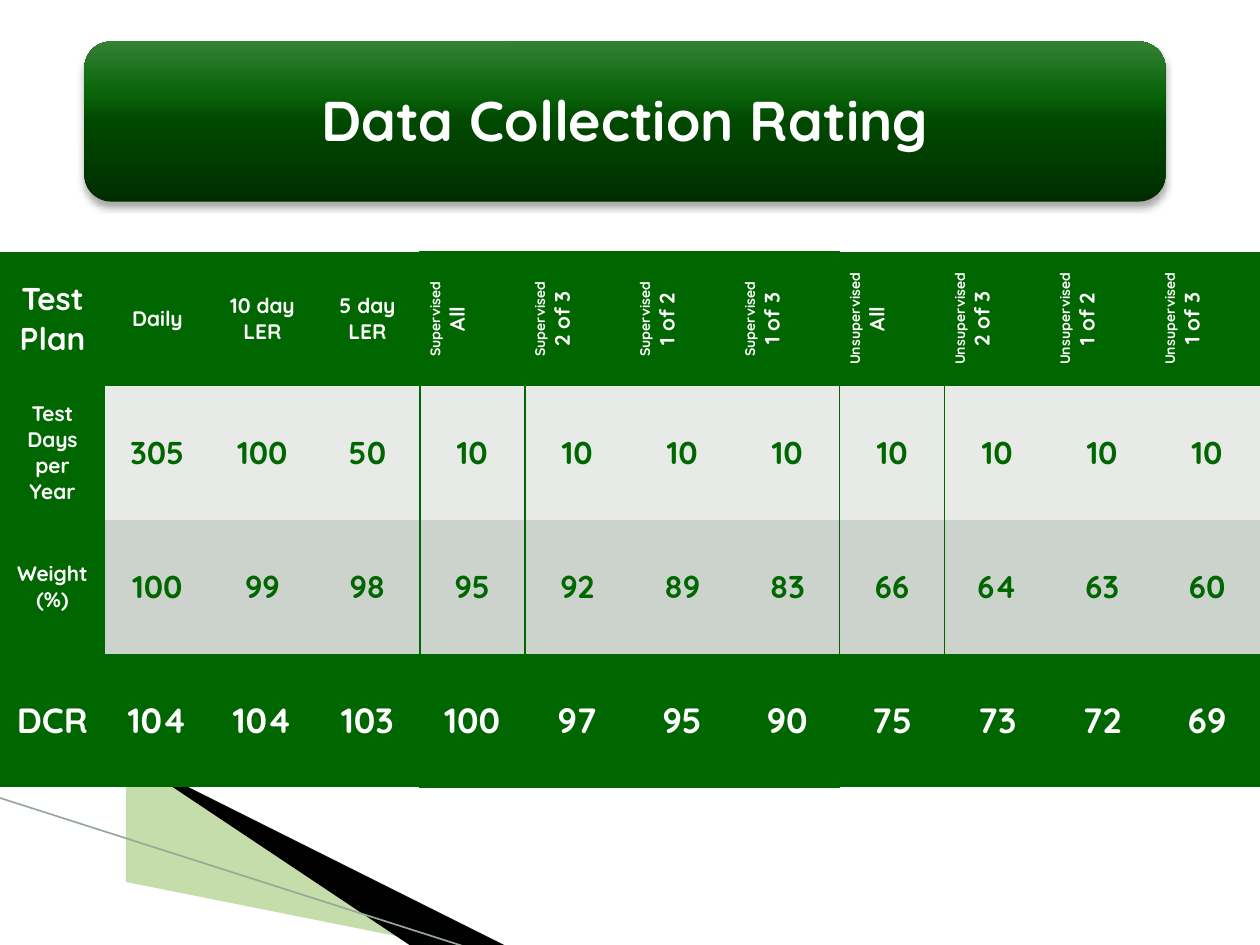
from lxml import etree
from pptx import Presentation
from pptx import util as u
from pptx.dml.color import RGBColor
from pptx.enum import shapes, text
from pptx.oxml import parse_xml
from pptx.oxml.ns import nsdecls, qn

GREEN = RGBColor(0x00, 0x66, 0x00)
WHITE = RGBColor(0xFF, 0xFF, 0xFF)
BLACK = RGBColor(0x00, 0x00, 0x00)
LEAF = RGBColor(0x6E, 0xAA, 0x2E)
SAGE = RGBColor(0x96, 0xA9, 0x96)
PALE = RGBColor(0xE7, 0xEA, 0xE7)
GREY = RGBColor(0xCC, 0xD3, 0xCC)
SHINE = [(0, "002D00"), (50, "004800"), (70, "0C670C"), (100, "358135")]
PLAIN = "{2D5ABB26-0587-4C30-8999-92F81FD0307C}"  # table style without grid


def write(frame, words, sizes, color=WHITE, font="Quicksand", lead=None):
    """Fill a frame with one centred paragraph a line; the last size repeats."""
    frame.word_wrap = True
    for i, line in enumerate(words.split("\n")):
        para = frame.paragraphs[0] if i == 0 else frame.add_paragraph()
        para.alignment = text.PP_ALIGN.CENTER
        if lead:
            para.line_spacing = lead
        run = para.add_run()
        run.text = line
        run.font.name = font
        run.font.size = u.Pt(sizes[min(i, len(sizes) - 1)])
        run.font.bold = True
        run.font.color.rgb = color


class Deck:
    def __init__(self, wide, high):
        self.prs = Presentation()
        self.prs.slide_width = u.Inches(wide)
        self.prs.slide_height = u.Inches(high)
        self.slide = self.prs.slides.add_slide(self.prs.slide_layouts[6])
        self.shapes = self.slide.shapes

    def wedge(self, points, color, alpha=None):
        build = self.shapes.build_freeform(*points[0], scale=u.Inches(1))
        build.add_line_segments(points[1:], close=True)
        shape = build.convert_to_shape()
        shape.shadow.inherit = False
        shape.line.fill.background()
        shape.fill.solid()
        shape.fill.fore_color.rgb = color
        if alpha:
            tint = next(shape.element.spPr.iter(qn("a:srgbClr")))
            etree.SubElement(tint, qn("a:alpha")).set("val", str(alpha * 1000))

    def line(self, start, end, color, width):
        ends = [u.Inches(v) for v in (*start, *end)]
        line = self.shapes.add_connector(shapes.MSO_CONNECTOR.STRAIGHT, *ends)
        line.line.color.rgb = color
        line.line.width = u.Pt(width)
        etree.SubElement(line.element.spPr, qn("a:effectLst"))

    def banner(self, box, stops):
        shape = self.shapes.add_shape(
            shapes.MSO_SHAPE.ROUNDED_RECTANGLE, *map(u.Inches, box))
        shape.line.fill.background()
        props = shape.element.spPr
        marks = "".join(f'<a:gs pos="{pos * 1000}"><a:srgbClr val="{tone}"/></a:gs>'
                        for pos, tone in stops)
        props.insert(2, parse_xml(
            f'<a:gradFill {nsdecls("a")} rotWithShape="1"><a:gsLst>{marks}</a:gsLst>'
            '<a:lin ang="16200000" scaled="0"/></a:gradFill>'))
        props.append(parse_xml(
            f'<a:effectLst {nsdecls("a")}><a:outerShdw blurRad="{u.Pt(4)}" '
            f'dist="{u.Pt(3)}" dir="5400000" rotWithShape="0">'
            '<a:srgbClr val="000000"><a:alpha val="35000"/></a:srgbClr>'
            '</a:outerShdw></a:effectLst>'))

    def label(self, box, words, size, **style):
        frame = self.shapes.add_textbox(*map(u.Inches, box)).text_frame
        frame.vertical_anchor = text.MSO_ANCHOR.MIDDLE
        frame.margin_left = frame.margin_right = u.Inches(0.09)
        frame.margin_top = frame.margin_bottom = u.Inches(0.09)
        write(frame, words, [size], **style)

    def table(self, box, rows, cols):
        frame = self.shapes.add_table(rows, cols, *map(u.Inches, box))
        frame.element.find(".//" + qn("a:tableStyleId")).text = PLAIN
        return frame.table

    def cell(self, cell, words, sizes, fill, color=WHITE, sides="", turn=False):
        props = cell._tc.get_or_add_tcPr()
        if turn:
            props.set("vert", "vert270")
        for side in sides:
            props.append(parse_xml(
                f'<a:ln{side} {nsdecls("a")} w="{u.Pt(1)}"><a:solidFill>'
                f'<a:srgbClr val="{GREEN}"/></a:solidFill></a:ln{side}>'))
        cell.fill.solid()
        cell.fill.fore_color.rgb = fill
        cell.vertical_anchor = text.MSO_ANCHOR.MIDDLE
        write(cell.text_frame, words, sizes, color)


def edges(row, col, last):
    """Sides ruled in green: a frame around the supervised columns 4 to 7."""
    inside = 4 <= col <= 7
    rules = {"L": col in (4, 8), "R": col in (3, 7),
             "T": inside and row == 0, "B": inside and row == last}
    return [side for side, on in rules.items() if on]


def main():
    deck = Deck(10, 7.5)

    # Corner sweep
    deck.wedge([(0.55, 6.51), (5.95, 7.51), (4.56, 7.51), (0.55, 6.5)], LEAF, 40)
    deck.wedge([(0.53, 6.49), (4.57, 7.51), (3.72, 7.52), (0.54, 6.5)], BLACK)
    deck.line((-0.01, 6.33), (3.71, 7.52), SAGE, 0.95)

    # Title
    deck.banner((0.67, 0.33, 8.58, 1.27), SHINE)
    deck.label((0.82, 0.4, 8.28, 1.15), "Data Collection Rating", 32, lead=0.9)

    # Ratings: heads, then body rows as (head, values, head size, size, fill, colour)
    plans = ["Daily", "10 day\nLER", "5 day\nLER"]
    plans += [f"{kind}\n{part}" for kind in ("Supervised", "Unsupervised")
              for part in ("All", "2 of 3", "1 of 2", "1 of 3")]
    body = [
        ("Test Plan", plans, 18, 12, GREEN, WHITE),
        ("Test Days per Year", [305, 100, 50] + [10] * 8, 12, 18, PALE, GREEN),
        ("Weight\n(%)", [100, 99, 98, 95, 92, 89, 83, 66, 64, 63, 60],
         12, 18, GREY, GREEN),
        ("DCR", [104, 104, 103, 100, 97, 95, 90, 75, 73, 72, 69],
         20, 20, GREEN, WHITE),
    ]
    grid = deck.table((0, 2, 10, 4.25), len(body), len(plans) + 1)
    for r, (head, values, big, size, fill, color) in enumerate(body):
        deck.cell(grid.cell(r, 0), head, [big], GREEN)
        for c, value in enumerate(values, 1):
            turn = r == 0 and c > 3
            deck.cell(grid.cell(r, c), str(value), [8, 12] if turn else [size],
                      fill, color, edges(r, c, len(body) - 1), turn)

    deck.prs.save("out.pptx")


if __name__ == "__main__":
    main()
